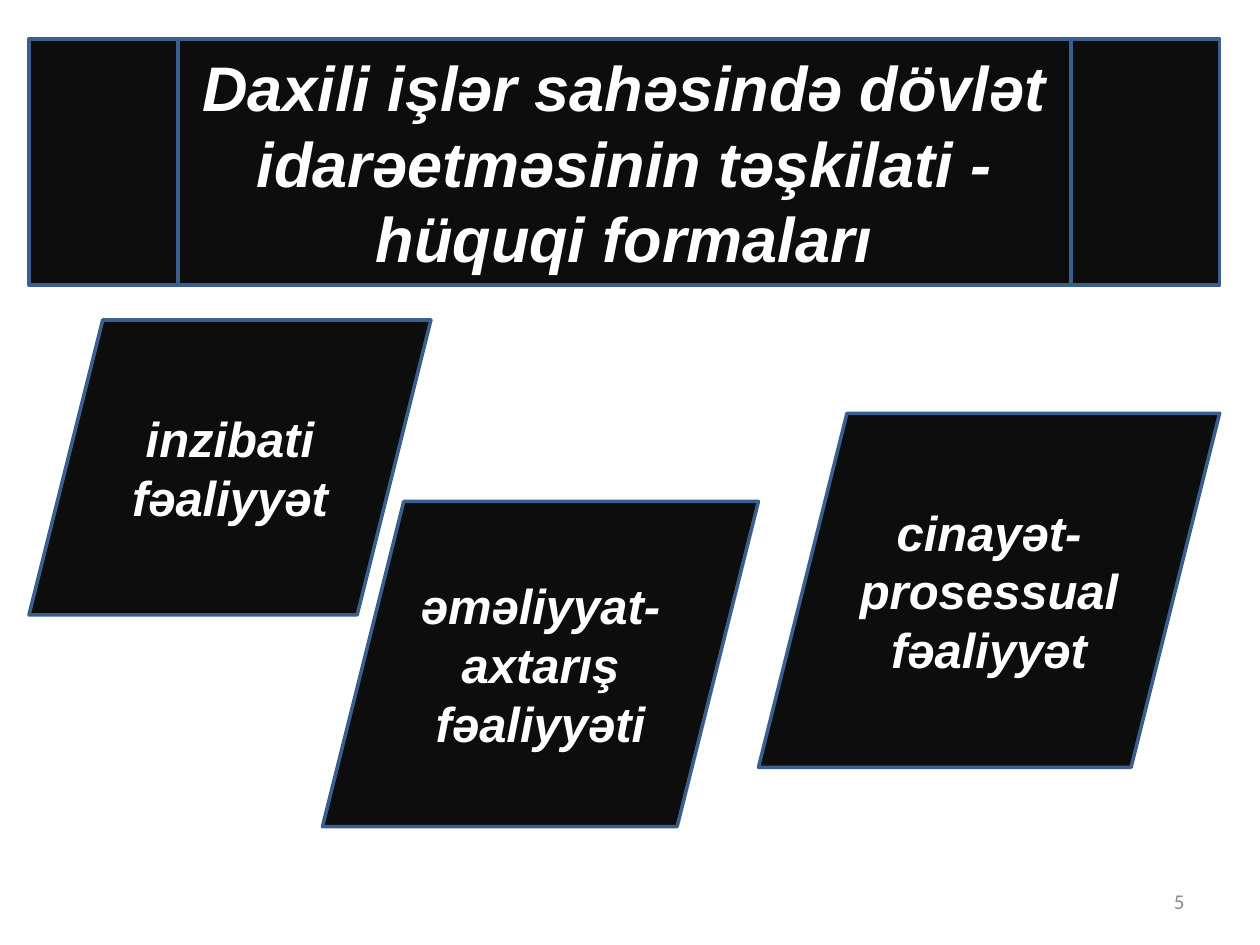
from dataclasses import dataclass

from pptx import Presentation
from pptx import util as u
from pptx.dml.color import RGBColor
from pptx.enum import shapes, text


@dataclass(frozen=True)
class Theme:
    fill: RGBColor = RGBColor(0x0D, 0x0D, 0x0D)
    line: RGBColor = RGBColor(0x3A, 0x5F, 0x8C)
    light: RGBColor = RGBColor(0xFF, 0xFF, 0xFF)
    muted: RGBColor = RGBColor(0x8C, 0x8C, 0x8C)
    heading_font: str = "Arial"
    number_font: str = "Calibri"
    title_size: int = 36
    form_size: int = 28
    number_size: int = 12
    line_width: int = 2


THEME = Theme()

FORMS = [
    ("inzibati fəaliyyət", (0.23, 2.54, 3.19, 2.34)),
    ("əməliyyat- axtarış fəaliyyəti", (2.56, 3.98, 3.46, 2.58)),
    ("cinayət-prosessual fəaliyyət", (6.02, 3.28, 3.66, 2.81)),
]


def inches(box):
    return [u.Inches(value) for value in box]


def write_text(shape, content, alignment, color, font_format):
    frame = shape.text_frame
    frame.word_wrap = True
    frame.vertical_anchor = text.MSO_ANCHOR.MIDDLE
    paragraph = frame.paragraphs[0]
    paragraph.alignment = alignment
    run = paragraph.add_run()
    run.text = content
    run.font.color.rgb = color
    for name, value in font_format.items():
        setattr(run.font, name, value)


def add_panel(slide, preset, box, content, size):
    shape = slide.shapes.add_shape(preset, *inches(box))
    shape.shadow.inherit = False
    shape.fill.solid()
    shape.fill.fore_color.rgb = THEME.fill
    shape.line.color.rgb = THEME.line
    shape.line.width = u.Pt(THEME.line_width)
    font_format = {
        "name": THEME.heading_font,
        "size": u.Pt(size),
        "bold": True,
        "italic": True,
    }
    write_text(shape, content, text.PP_ALIGN.CENTER, THEME.light, font_format)


def add_slide_number(slide, box, content):
    shape = slide.shapes.add_textbox(*inches(box))
    font_format = {"name": THEME.number_font, "size": u.Pt(THEME.number_size)}
    write_text(shape, content, text.PP_ALIGN.RIGHT, THEME.muted, font_format)


def main():
    presentation = Presentation()
    presentation.slide_width = u.Inches(10)
    presentation.slide_height = u.Inches(7.5)
    slide = presentation.slides.add_slide(presentation.slide_layouts[6])

    add_slide_number(slide, (7.17, 6.95, 2.33, 0.4), "5")
    add_panel(
        slide,
        shapes.MSO_SHAPE.FLOWCHART_PREDEFINED_PROCESS,
        (0.23, 0.31, 9.45, 1.95),
        "Daxili işlər sahəsində dövlət idarəetməsinin təşkilati - hüquqi formaları",
        THEME.title_size,
    )
    for content, box in FORMS:
        add_panel(slide, shapes.MSO_SHAPE.PARALLELOGRAM, box, content, THEME.form_size)

    presentation.save("out.pptx")


if __name__ == "__main__":
    main()
